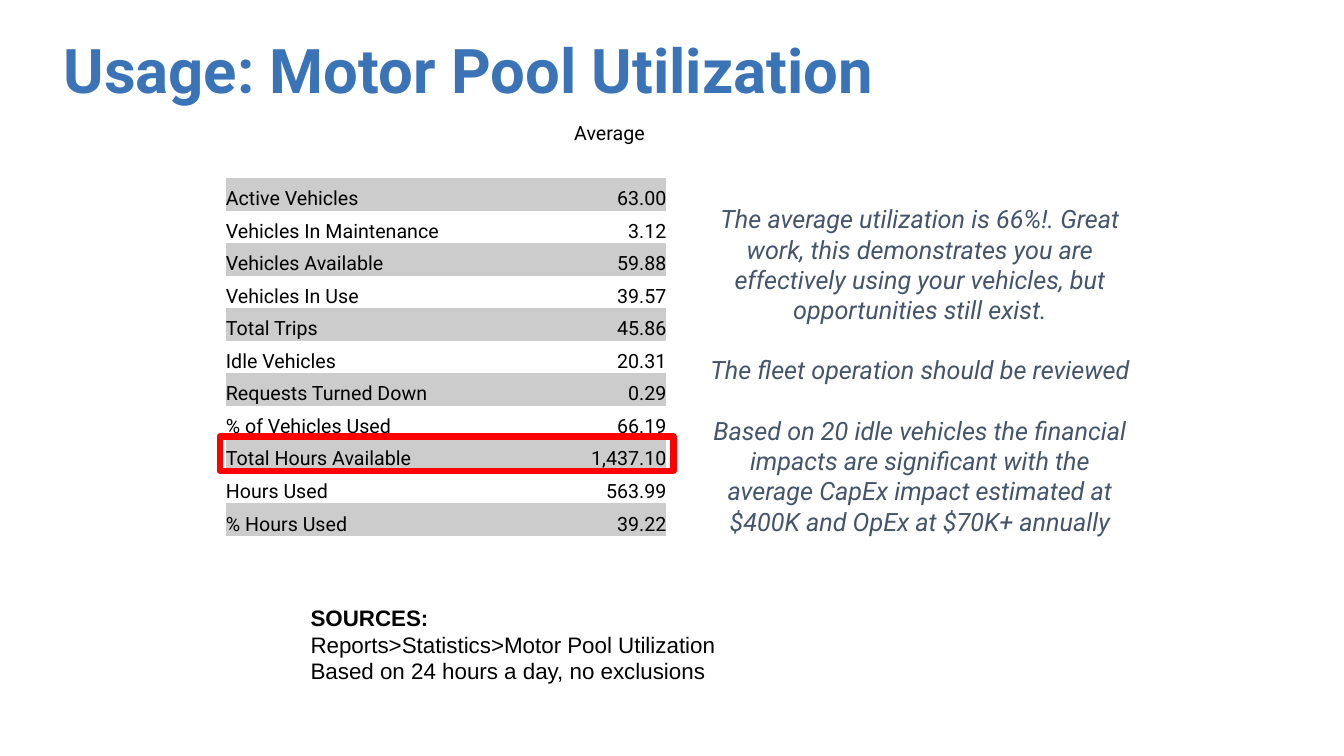
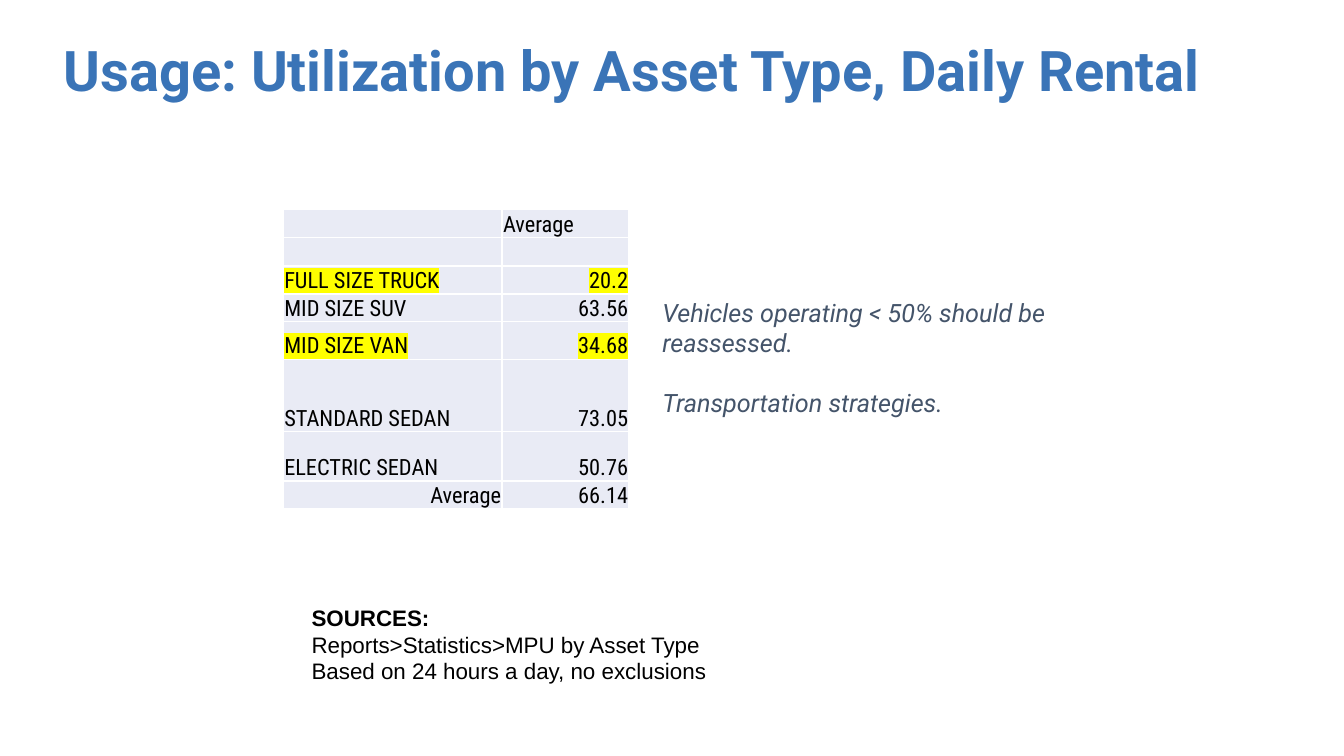
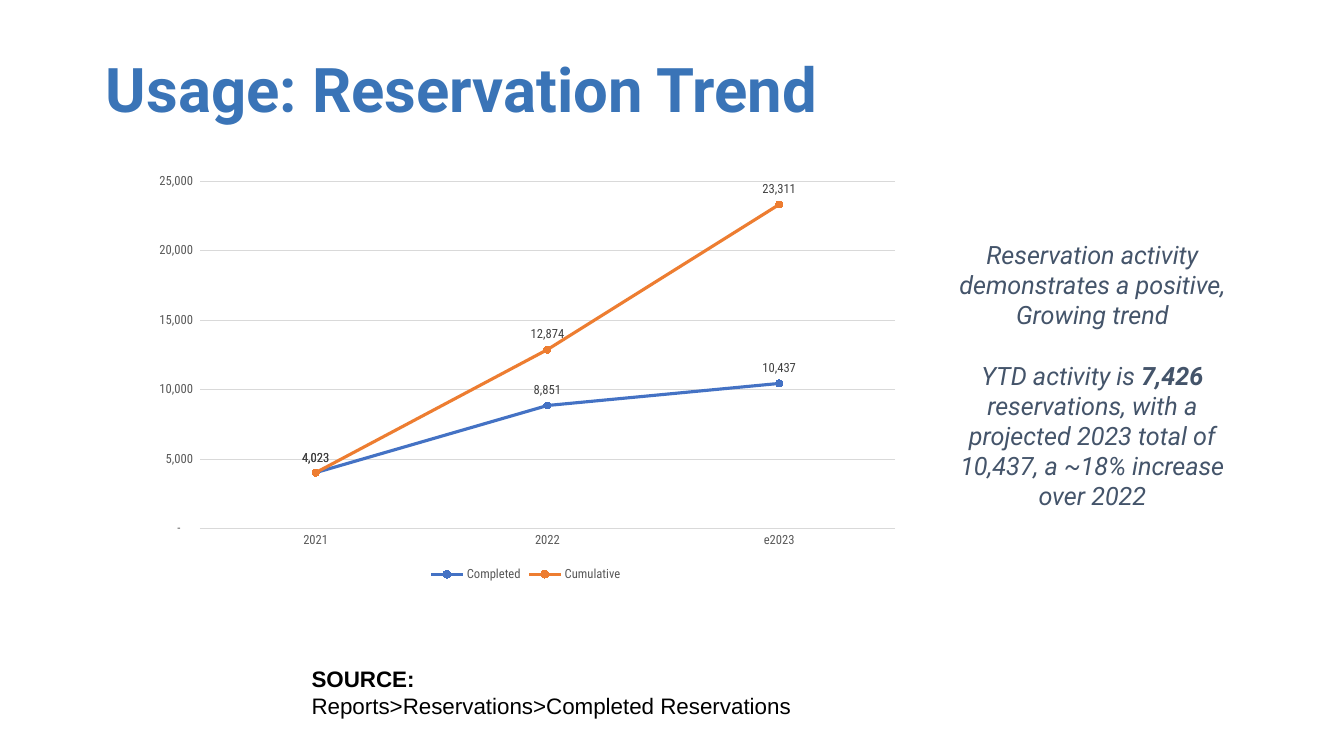
from lxml import etree
from pptx import Presentation, util as u
from pptx.chart.data import CategoryChartData
from pptx.dml.color import RGBColor
from pptx.enum import chart as ch, shapes, text
from pptx.oxml.ns import qn

PX = 9144  # 100 px to the inch
BLUE, SLATE, BLACK, RED = "3A74B7", "44546A", "000000", "FF0000"
GREY, PALE, WHITE, YELLOW = "CCCCCC", "E9EBF5", "FFFFFF", "FFFF00"
RULE, SOFT, DARK = "D9D9D9", "595959", "404040"
HEAD, SLIM, PLAIN = "Roboto", "Roboto Condensed", "Arial"
LEFT, MID, RIGHT = text.PP_ALIGN.LEFT, text.PP_ALIGN.CENTER, text.PP_ALIGN.RIGHT
NUM = r'_(* #,##0_);_(* \(#,##0\);_(* "-"??_);_('
rgb = RGBColor.from_string


def write(frame, paras, size, face, tone, align=LEFT, slant=False, gap=0, mark=None):
    """Fill a frame; each paragraph is a list of (words, bold) runs."""
    for i, runs in enumerate(paras):
        para = frame.paragraphs[0] if i == 0 else frame.add_paragraph()
        para.alignment = align
        if i and gap:
            para.space_before = u.Pt(gap)
        for words, bold in runs:
            run = para.add_run()
            run.text = words
            font = run.font
            font.size, font.name, font.bold, font.italic = u.Pt(size), face, bold, slant
            font.color.rgb = rgb(tone)
            if mark:
                light = etree.Element(qn("a:highlight"))
                etree.SubElement(light, qn("a:srgbClr"), val=mark)
                font._element.find(qn("a:solidFill")).addnext(light)


def grid(slide, box, cols, highs, rows, size, face, pad, fills, marks=(), edge=None):
    """Add a table; a row holds (words, alignment) for each cell."""
    shape = slide.shapes.add_table(len(rows), len(cols), *[n * PX for n in box])
    table = shape.table
    table.first_row = table.horz_banding = False
    table._tbl.tblPr.find(qn("a:tableStyleId")).text = "{2D5ABB26-0587-4C30-8999-92F81FD0307C}"
    for col, wide in zip(table.columns, cols):
        col.width = wide * PX
    for r, row in enumerate(rows):
        table.rows[r].height = round(highs[r] * PX)
        for c, (words, align) in enumerate(row):
            cell = table.cell(r, c)
            cell.margin_left = cell.margin_right = cell.margin_top = pad * PX
            cell.margin_bottom = 0
            cell.vertical_anchor = text.MSO_ANCHOR.BOTTOM
            if edge:
                for side in ("lnL", "lnR", "lnT", "lnB"):
                    line = etree.SubElement(cell._tc.tcPr, qn("a:" + side), w="12700")
                    solid = etree.SubElement(line, qn("a:solidFill"))
                    etree.SubElement(solid, qn("a:srgbClr"), val=edge)
            if fills[r]:
                cell.fill.solid()
                cell.fill.fore_color.rgb = rgb(fills[r])
            else:
                cell.fill.background()
            if words:
                write(cell.text_frame, [[(words, False)]], size, face, BLACK, align,
                      mark=YELLOW if r in marks else None)
            else:
                para = cell.text_frame.paragraphs[0]
                etree.SubElement(para._p, qn("a:endParaRPr"), sz="1200")


prs = Presentation()
prs.slide_width, prs.slide_height = 1333 * PX, 750 * PX

# Title, sources and remarks of each slide
pages = [
    dict(title="Usage: Motor Pool Utilization", size=44, spot=(53, 0, 1218, 145),
         foot=(302, 593, 642, 92),
         source=["SOURCES:", "Reports>Statistics>Motor Pool Utilization",
                 "Based on 24 hours a day, no exclusions"],
         side=(694, 195, 437, 344), align=MID,
         note=[[("The average utilization is 66%!. Great work, this demonstrates you are "
                 "effectively using your vehicles, but opportunities still exist.", False)],
               [("The fleet operation should be reviewed", False)],
               [("Based on 20 idle vehicles the financial impacts are significant with the "
                 "average CapEx impact estimated at $400K and OpEx at $70K+ annually", False)]]),
    dict(title="Usage: Utilization by Asset Type, Daily Rental", size=40,
         spot=(53, 0, 1281, 145), foot=(303, 593, 642, 92),
         source=["SOURCES:", "Reports>Statistics>MPU by Asset Type",
                 "Based on 24 hours a day, no exclusions"],
         side=(651, 288, 437, 133), align=LEFT,
         note=[[("Vehicles operating < 50% should be reassessed.", False)],
               [("Transportation strategies.", False)]]),
    dict(title="Usage: Reservation Trend", size=44, spot=(95, 19, 1218, 145),
         foot=(303, 654, 642, 65),
         source=["SOURCE:", "Reports>Reservations>Completed Reservations"],
         side=(930, 230, 307, 284), align=MID,
         note=[[("Reservation activity demonstrates a positive, Growing trend", False)],
               [("YTD activity is ", False), ("7,426 ", True),
                ("reservations, with a projected 2023 total of 10,437, "
                 "a ~18% increase over 2022", False)]]),
]
slides = []
for page in pages:
    slide = prs.slides.add_slide(prs.slide_layouts[5])
    slides.append(slide)
    title = slide.shapes.title
    title.left, title.top, title.width, title.height = [n * PX for n in page["spot"]]
    frame = title.text_frame
    frame.auto_size = text.MSO_AUTO_SIZE.NONE
    frame.vertical_anchor = text.MSO_ANCHOR.MIDDLE
    write(frame, [[(page["title"], True)]], page["size"], HEAD, BLUE)
    frame.paragraphs[0].line_spacing = 0.9

    frames = []
    for box in (page["foot"], page["side"]):
        frame = slide.shapes.add_textbox(*[n * PX for n in box]).text_frame
        frame.word_wrap = True
        frame.vertical_anchor = text.MSO_ANCHOR.MIDDLE
        frame.margin_left = frame.margin_right = 6 * PX
        frame.margin_top = frame.margin_bottom = 6 * PX
        frames.append(frame)
    foot, side = frames
    lines = [[(line, i == 0)] for i, line in enumerate(page["source"])]
    write(foot, lines, 16, PLAIN, BLACK)
    write(side, page["note"], 18, HEAD, SLATE, page["align"], slant=True, gap=21.6)

pool, asset, trend = slides

# Motor pool table with one row framed
facts = [("Active Vehicles", "63.00"), ("Vehicles In Maintenance", "3.12"),
         ("Vehicles Available", "59.88"), ("Vehicles In Use", "39.57"),
         ("Total Trips", "45.86"), ("Idle Vehicles", "20.31"),
         ("Requests Turned Down", "0.29"), ("% of Vehicles Used", "66.19"),
         ("Total Hours Available", "1,437.10"), ("Hours Used", "563.99"),
         ("% Hours Used", "39.22")]
rows = [[("", LEFT), ("Average", MID)], [("", LEFT), ("", LEFT)]]
rows += [[(name, LEFT), (value, RIGHT)] for name, value in facts]
count = len(rows)
fills = [GREY if r > 1 and r % 2 == 0 else None for r in range(count)]
grid(pool, (224, 112, 437, 420), (324, 113), [420 / count] * count, rows, 14, HEAD, 0, fills)

ring = pool.shapes.add_shape(shapes.MSO_SHAPE.RECTANGLE, *[n * PX for n in (218, 433, 450, 34)])
ring.shadow.inherit = False
ring.fill.background()
ring.line.color.rgb = rgb(RED)
ring.line.width = u.Pt(4.5)

# Asset type table
types = [("FULL SIZE TRUCK", "20.2"), ("MID SIZE SUV", "63.56"), ("MID SIZE VAN", "34.68"),
         ("STANDARD SEDAN", "73.05"), ("ELECTRIC SEDAN", "50.76")]
rows = [[("", LEFT), ("Average", LEFT)], [("", LEFT), ("", LEFT)]]
rows += [[(name, LEFT), (value, RIGHT)] for name, value in types]
rows.append([("Average", RIGHT), ("66.14", RIGHT)])
grid(asset, (281, 208, 343, 294), (217, 126), (28, 28, 27, 27, 37, 72, 49, 27), rows,
     16, SLIM, 1, [PALE] * len(rows), marks=(2, 4), edge=WHITE)

# Reservation chart
data = CategoryChartData(number_format=NUM)
data.categories = ["2021", "2022", "e2023"]
data.add_series("Completed", (4023, 8851, 10437))
data.add_series("Cumulative", (4023, 12874, 23311))
box = [n * PX for n in (140, 164, 763, 417)]
chart = trend.shapes.add_chart(ch.XL_CHART_TYPE.LINE_MARKERS, *box, data).chart
chart.has_title = False
chart.font.size, chart.font.name = u.Pt(10), SLIM
chart.has_legend = True
chart.legend.position = ch.XL_LEGEND_POSITION.BOTTOM
chart.legend.include_in_layout = False
cats, vals = chart.category_axis, chart.value_axis
for font in (cats.tick_labels.font, vals.tick_labels.font, chart.legend.font):
    font.size, font.name = u.Pt(9), SLIM
    font.color.rgb = rgb(SOFT)
cats.major_tick_mark = vals.major_tick_mark = ch.XL_TICK_MARK.NONE
vals.minimum_scale, vals.maximum_scale, vals.major_unit = 0, 25000, 5000
vals.tick_labels.number_format = NUM
vals.tick_labels.number_format_is_linked = False
vals.format.line.fill.background()
for line in (cats.format.line, vals.major_gridlines.format.line):
    line.color.rgb = rgb(RULE)
    line.width = u.Pt(0.75)
plot = chart.plots[0]
plot.vary_by_categories = False
for series, tone in zip(plot.series, ("4472C4", "ED7D31")):
    series.smooth = False
    series.format.line.color.rgb = rgb(tone)
    series.format.line.width = u.Pt(2.25)
    dot = series.marker
    dot.style, dot.size = ch.XL_MARKER_STYLE.CIRCLE, 5
    dot.format.fill.solid()
    dot.format.fill.fore_color.rgb = rgb(tone)
    dot.format.line.color.rgb = rgb(tone)
    tags = series.data_labels
    tags.show_value = True
    tags.position = ch.XL_LABEL_POSITION.ABOVE
    tags.number_format, tags.number_format_is_linked = NUM, False
    tags.font.size, tags.font.name = u.Pt(9), SLIM
    tags.font.color.rgb = rgb(DARK)

prs.save("out.pptx")
